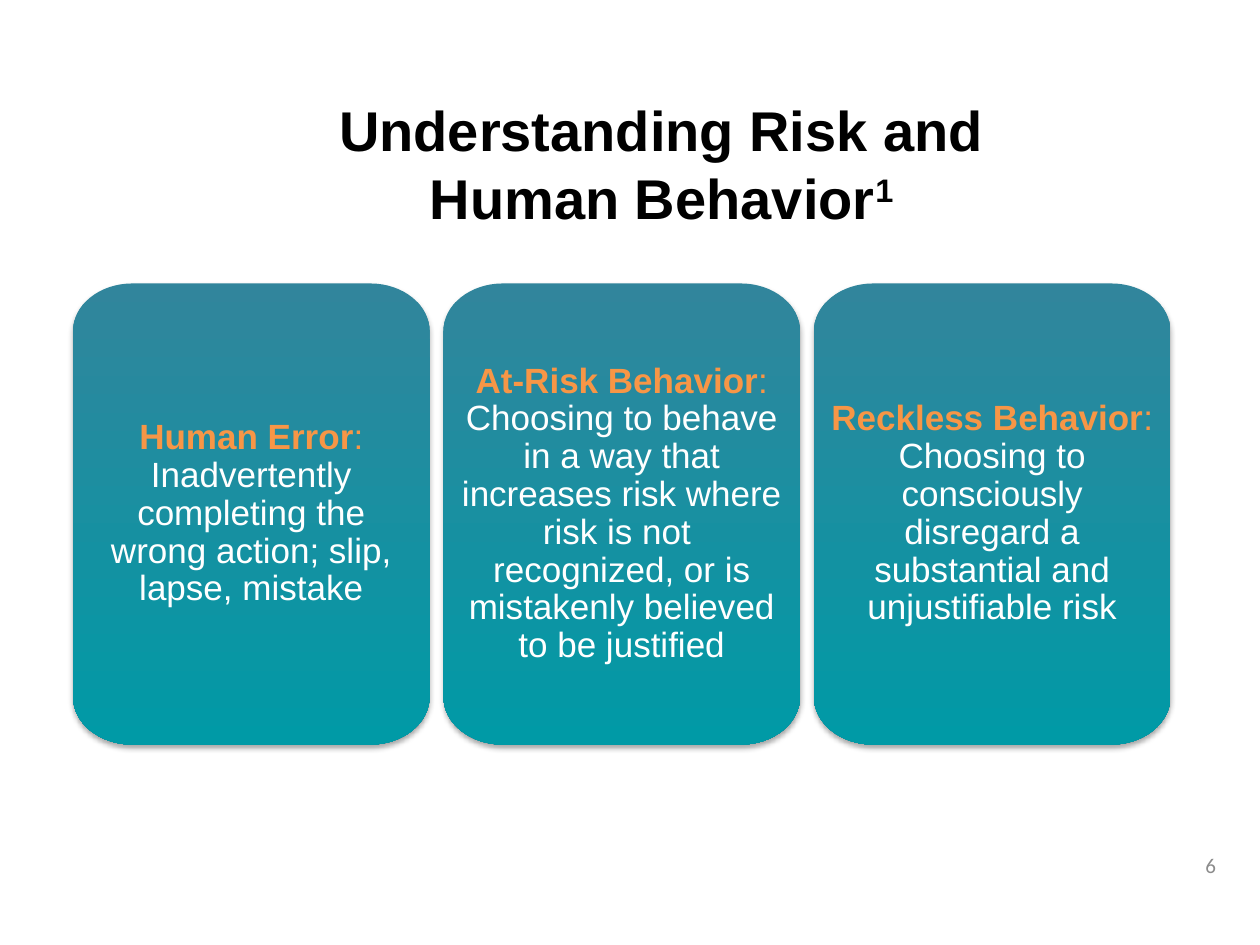
from copy import deepcopy
from math import cos, pi, sin, tan

from lxml import etree
from pptx import Presentation
from pptx.dml.color import RGBColor
from pptx.enum.text import MSO_ANCHOR, PP_ALIGN
from pptx.oxml.ns import qn
from pptx.util import Inches, Pt

CENTER, RIGHT = PP_ALIGN.CENTER, PP_ALIGN.RIGHT
MIDDLE = MSO_ANCHOR.MIDDLE

BLACK = RGBColor(0, 0, 0)
WHITE = RGBColor(255, 255, 255)
GRAY = RGBColor(0x8C, 0x8C, 0x8C)
ORANGE = RGBColor(0xF7, 0x96, 0x46)
BLUE = RGBColor(0x31, 0x85, 0x9C)
TEAL = RGBColor(0x00, 0x9A, 0xA6)

LEFT, TOP, WIDE, HIGH, STEP = 0.58, 2.25, 2.83, 3.66, 2.94
CURVE_X, CURVE_Y = 0.47, 0.38

CARDS = [
    ("Human Error",
     "Inadvertently completing the wrong action; slip, lapse, mistake"),
    ("At-Risk Behavior",
     "Choosing to behave in a way that increases risk where risk is not  "
     "recognized, or is mistakenly believed to be justified"),
    ("Reckless Behavior",
     "Choosing to consciously disregard a substantial and unjustifiable risk"),
]


def add_run(para, text, size, color, bold=False, face="Arial"):
    run = para.add_run()
    run.text = text
    font = run.font
    font.name, font.size, font.bold = face, Pt(size), bold
    font.color.rgb = color
    return run


def set_title(slide):
    title = slide.shapes.title
    title.left, title.top = Inches(0.75), Inches(0.67)
    title.width, title.height = Inches(9), Inches(1.25)
    frame = title.text_frame
    frame.vertical_anchor = MIDDLE
    para = frame.paragraphs[0]
    para.alignment = CENTER
    first = add_run(para, "Understanding Risk and", 32, BLACK, True)
    para.add_line_break()
    para._p.find(qn("a:br")).append(deepcopy(first.font._element))
    add_run(para, "Human Behavior", 32, BLACK, True)
    note = add_run(para, "1", 32, BLACK, True)
    note.font._element.set("baseline", "30000")


def corner(x, y, start):
    """Return a start point and two Bezier curves for a quarter ellipse."""
    half = pi / 4
    pull = 4 / 3 * tan(half / 4)

    def place(angle, push):
        dx = cos(angle) - push * sin(angle)
        dy = sin(angle) + push * cos(angle)
        return Inches(x + CURVE_X * dx), Inches(y + CURVE_Y * dy)

    points = [place(start, 0)]
    for angle in (start, start + half):
        points += [place(angle, pull), place(angle + half, -pull),
                   place(angle + half, 0)]
    return points


def bend(shape):
    """Turn each corner's six line segments into two cubic curves."""
    route = next(shape._element.iter(qn("a:path")))
    lines = route.findall(qn("a:lnTo"))
    for base in range(0, len(lines), 7):
        for at in (base, base + 3):
            curve = etree.Element(qn("a:cubicBezTo"))
            lines[at].addprevious(curve)
            for line in lines[at:at + 3]:
                curve.append(line[0])
                route.remove(line)


def add_outline(slide, left):
    near_x, far_x = left + CURVE_X, left + WIDE - CURVE_X
    near_y, far_y = TOP + CURVE_Y, TOP + HIGH - CURVE_Y
    hubs = [(near_x, near_y), (far_x, near_y), (far_x, far_y), (near_x, far_y)]
    points = []
    for turn, (x, y) in enumerate(hubs):
        points += corner(x, y, pi + turn * pi / 2)
    pen = slide.shapes.build_freeform(*points[0])
    pen.add_line_segments(points[1:] + points[:1], close=True)
    shape = pen.convert_to_shape()
    bend(shape)
    return shape


def add_shadow(shape):
    shape.shadow.inherit = False
    effects = shape._element.spPr.find(qn("a:effectLst"))
    outer = etree.SubElement(effects, qn("a:outerShdw"), blurRad=str(Pt(3.1)),
                             dist=str(Pt(1.8)), dir="5400000", rotWithShape="0")
    color = etree.SubElement(outer, qn("a:srgbClr"), val="000000")
    etree.SubElement(color, qn("a:alpha"), val="35000")


def add_card(slide, left, head, body):
    card = add_outline(slide, left)
    card.line.fill.background()
    card.fill.gradient()
    card.fill.gradient_angle = 270
    for stop, color in zip(card.fill.gradient_stops, (BLUE, TEAL)):
        stop.color.rgb = color
    add_shadow(card)

    frame = card.text_frame
    frame.word_wrap = True
    frame.vertical_anchor = MIDDLE
    frame.margin_left = frame.margin_right = Inches(0.1)
    frame.margin_top = frame.margin_bottom = Inches(0.1)
    para = frame.paragraphs[0]
    para.alignment, para.line_spacing = CENTER, 0.9
    add_run(para, head, 20, ORANGE, True)
    add_run(para, ": ", 20, ORANGE)
    add_run(para, body, 20, WHITE)


def add_number(slide, text):
    box = slide.shapes.add_textbox(Inches(7.42), Inches(6.67),
                                   Inches(2.33), Inches(0.4))
    frame = box.text_frame
    frame.word_wrap = True
    frame.vertical_anchor = MIDDLE
    para = frame.paragraphs[0]
    para.alignment = RIGHT
    add_run(para, text, 12, GRAY, face="Calibri")


def main():
    deck = Presentation()
    deck.slide_width, deck.slide_height = Inches(10), Inches(7.5)
    slide = deck.slides.add_slide(deck.slide_layouts[5])
    add_number(slide, "6")
    set_title(slide)
    for i, (head, body) in enumerate(CARDS):
        add_card(slide, LEFT + i * STEP, head, body)
    deck.save("out.pptx")


if __name__ == "__main__":
    main()
